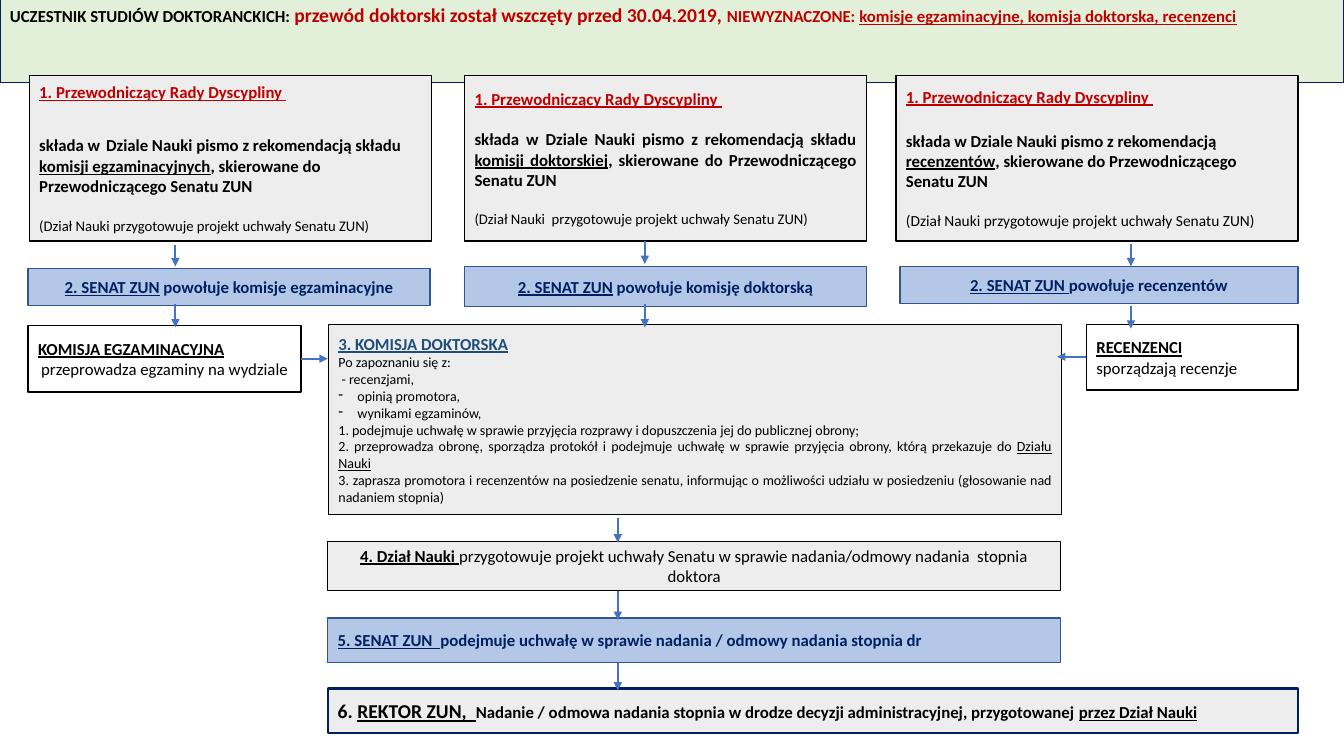
from lxml import etree
from pptx import Presentation
from pptx.dml.color import RGBColor
from pptx.enum.shapes import MSO_CONNECTOR, MSO_SHAPE
from pptx.enum.text import MSO_ANCHOR, MSO_AUTO_SIZE, PP_ALIGN
from pptx.oxml.ns import qn
from pptx.util import Cm, Pt

RECT, STRAIGHT = MSO_SHAPE.RECTANGLE, MSO_CONNECTOR.STRAIGHT
LEFT, CENTER, JUSTIFY = PP_ALIGN.LEFT, PP_ALIGN.CENTER, PP_ALIGN.JUSTIFY
TOP, MIDDLE = MSO_ANCHOR.TOP, MSO_ANCHOR.MIDDLE
FIT = MSO_AUTO_SIZE.SHAPE_TO_FIT_TEXT

COLORS = {
    "black": "000000", "white": "FFFFFF", "gray": "EDEDED", "green": "E2F0D9",
    "blue": "B4C7E7", "edge": "325491", "navy": "002060", "steel": "1F4E79",
    "red": "C00000", "arrow": "4472C4",
}


def color(name):
    return RGBColor.from_string(COLORS[name])


def run(text, size=12, ink="black", bold=False, underline=False):
    return text, ink, {"size": Pt(size), "bold": bold, "underline": underline}


def strong(text, **style):
    return run(text, bold=True, **style)


def key(text, **style):
    return run(text, bold=True, underline=True, **style)


def para(*runs, align=LEFT, before=0, bullet=None):
    return {"runs": runs, "align": align, "before": before, "bullet": bullet}


class Flowchart:
    font = "Calibri"
    arrow_width = Pt(1.5)
    bullet_indent = Cm(0.48)

    def __init__(self, prs):
        self.s = prs.slides.add_slide(prs.slide_layouts[5])

    def title(self, area, paragraph):
        sp = self.s.shapes.title
        places = dict(zip(("left", "top", "width", "height"), map(Cm, area)))
        for name, value in places.items():
            setattr(sp, name, value)
        self.paint(sp, "green", "navy", 0.75)
        self.set_text(sp, [paragraph], TOP)
        sp.text_frame.auto_size = FIT

    def box(self, area, fill, line, *paragraphs, width=1):
        sp = self.s.shapes.add_shape(RECT, *map(Cm, area))
        sp.shadow.inherit = False
        self.paint(sp, fill, line, width)
        self.set_text(sp, paragraphs, MIDDLE)

    def paint(self, sp, fill, line, width):
        sp.fill.solid()
        sp.fill.fore_color.rgb = color(fill)
        sp.line.color.rgb = color(line)
        sp.line.width = Pt(width)

    def set_text(self, sp, paragraphs, anchor):
        tf = sp.text_frame
        frame = {"word_wrap": True, "vertical_anchor": anchor,
                 "margin_left": Cm(0.25), "margin_right": Cm(0.25),
                 "margin_top": Cm(0.13), "margin_bottom": Cm(0.13)}
        for name, value in frame.items():
            setattr(tf, name, value)
        for i, item in enumerate(paragraphs):
            p = tf.add_paragraph() if i else tf.paragraphs[0]
            layout = {"alignment": item["align"], "line_spacing": 1.0,
                      "space_before": Pt(item["before"])}
            for name, value in layout.items():
                setattr(p, name, value)
            if item["bullet"]:
                self.bullet(p, item["bullet"])
            for text, ink, style in item["runs"]:
                r = p.add_run()
                r.text = text
                for name, value in {"name": self.font, **style}.items():
                    setattr(r.font, name, value)
                r.font.color.rgb = color(ink)

    def bullet(self, p, char):
        props = p._p.get_or_add_pPr()
        props.set("marL", str(self.bullet_indent))
        props.set("indent", str(-self.bullet_indent))
        etree.SubElement(props, qn("a:buChar")).set("char", char)

    def arrow(self, x1, y1, x2, y2):
        c = self.s.shapes.add_connector(STRAIGHT, *map(Cm, (x1, y1, x2, y2)))
        c.line.color.rgb = color("arrow")
        c.line.width = self.arrow_width
        props = c._element.spPr
        etree.SubElement(props.find(qn("a:ln")), qn("a:tailEnd")).set("type", "triangle")
        etree.SubElement(props, qn("a:effectLst"))


def add_proposals(chart):
    """Step 1: the three recommendations sent to the senate."""
    pismo = "składa w Dziale Nauki pismo z rekomendacją "
    adresat = ", skierowane do Przewodniczącego Senatu ZUN"
    projekt = "przygotowuje projekt uchwały Senatu ZUN)"
    proposals = [
        (0.74, 17, LEFT, 10.5, "(Dział Nauki " + projekt,
         [strong("składa w"), strong(" ", size=18),
          strong("Dziale Nauki pismo z rekomendacją składu "),
          key("komisji egzaminacyjnych"), strong(adresat)]),
        (11.71, 14.6, JUSTIFY, 10.5, "(Dział Nauki  " + projekt,
         [strong(pismo + "składu "), key("komisji doktorskiej"), strong(adresat)]),
        (22.58, 17, LEFT, 11, "(Dział Nauki " + projekt,
         [strong(pismo), key("recenzentów"), strong(adresat)]),
    ]
    for x, gap, align, size, note, request in proposals:
        chart.box((x, 1.9, 10.13, 4.17), "gray", "black",
                  para(key("1. Przewodniczący Rady Dyscypliny ", ink="red"), align=JUSTIFY),
                  para(*request, align=align, before=gap),
                  para(run(note, size=size), align=JUSTIFY, before=14.6))


def add_appointments(chart):
    """Step 2: the senate appoints each body."""
    appointments = [
        ((0.71, 6.76, 10.13, 0.94), "2. SENAT ZUN", " powołuje komisje egzaminacyjne"),
        ((11.71, 6.71, 10.13, 1.02), "2. SENAT ZUN", " powołuje komisję doktorską"),
        ((22.68, 6.71, 10.03, 0.94), "2. SENAT ZUN ", "powołuje recenzentów"),
    ]
    for area, senate, action in appointments:
        chart.box(area, "blue", "edge",
                  para(key(senate, ink="navy"), strong(action, ink="navy"), align=CENTER))


def add_bodies(chart):
    """Step 3: the doctoral committee between examiners and reviewers."""
    chart.box((0.71, 8.2, 6.88, 1.68), "white", "black",
              para(key("KOMISJA EGZAMINACYJNA")),
              para(run("przeprowadza egzaminy na wydziale"), align=CENTER))
    chart.box((27.38, 8.18, 5.33, 1.65), "white", "black",
              para(key("RECENZENCI")), para(run("sporządzają recenzje")))
    duties = [
        ("Po zapoznaniu się z:", None),
        (" - recenzjami, ", None),
        ("opinią promotora, ", "-"),
        ("wynikami egzaminów,", "-"),
        ("1. podejmuje uchwałę w sprawie przyjęcia rozprawy i dopuszczenia jej do "
         "publicznej obrony;", None),
        ("2. przeprowadza obronę, sporządza protokół i podejmuje uchwałę w sprawie "
         "przyjęcia obrony, którą przekazuje do |Działu Nauki", None),
        ("3. zaprasza promotora i recenzentów na posiedzenie senatu, informując o "
         "możliwości udziału w posiedzeniu (głosowanie nad nadaniem stopnia)", None),
    ]
    lines = [para(*(run(part, size=10, underline=i > 0)
                    for i, part in enumerate(text.split("|"))),
                  align=JUSTIFY, bullet=bullet)
             for text, bullet in duties]
    chart.box((8.28, 8.18, 18.47, 4.78), "gray", "black",
              para(key("3. KOMISJA DOKTORSKA", ink="steel")), *lines)


def add_decisions(chart):
    """Steps 4 to 6: draft, vote and final decision."""
    chart.box((8.26, 13.64, 18.47, 1.24), "gray", "black",
              para(key("4. Dział Nauki "),
                   run("przygotowuje projekt uchwały Senatu w sprawie nadania/odmowy "
                       "nadania  stopnia doktora"), align=CENTER))
    chart.box((8.26, 15.57, 18.47, 1.12), "blue", "edge",
              para(key("5. SENAT ZUN  ", ink="navy"),
                   strong("podejmuje uchwałę w sprawie nadania / odmowy nadania stopnia dr",
                          ink="navy")))
    chart.box((8.26, 17.35, 24.46, 1.12), "gray", "navy",
              para(strong("6. ", size=14), key("REKTOR ZUN,  ", size=14),
                   strong("Nadanie / odmowa nadania stopnia w drodze decyzji "
                          "administracyjnej, przygotowanej "),
                   key("przez Dział Nauki")), width=1.5)


def add_arrows(chart):
    down = {
        4.42: [(6.17, 6.71), (7.67, 8.25)],
        16.25: [(6.07, 6.65), (7.67, 8.25)],
        28.5: [(6.15, 6.71), (7.7, 8.28)],
        15.57: [(13.06, 13.67), (14.88, 15.62), (16.71, 17.4)],
    }
    for x, spans in down.items():
        for start, end in spans:
            chart.arrow(x, start, x, end)
    for start, end, y in ((7.59, 8.26, 9.04), (27.38, 26.64, 8.99)):
        chart.arrow(start, y, end, y)


def main():
    prs = Presentation()
    prs.slide_width, prs.slide_height = Cm(33.87), Cm(19.05)
    chart = Flowchart(prs)
    chart.title((0, -0.05, 33.87, 0.86), para(
        strong("UCZESTNIK STUDIÓW DOKTORANCKICH: "),
        strong("przewód doktorski został wszczęty przed 30.04.2019, ", size=14, ink="red"),
        strong("NIEWYZNACZONE: ", ink="red"),
        key("komisje egzaminacyjne, komisja doktorska, recenzenci", ink="red")))
    for add_step in (add_proposals, add_appointments, add_bodies, add_decisions, add_arrows):
        add_step(chart)
    prs.save("out.pptx")


if __name__ == "__main__":
    main()
